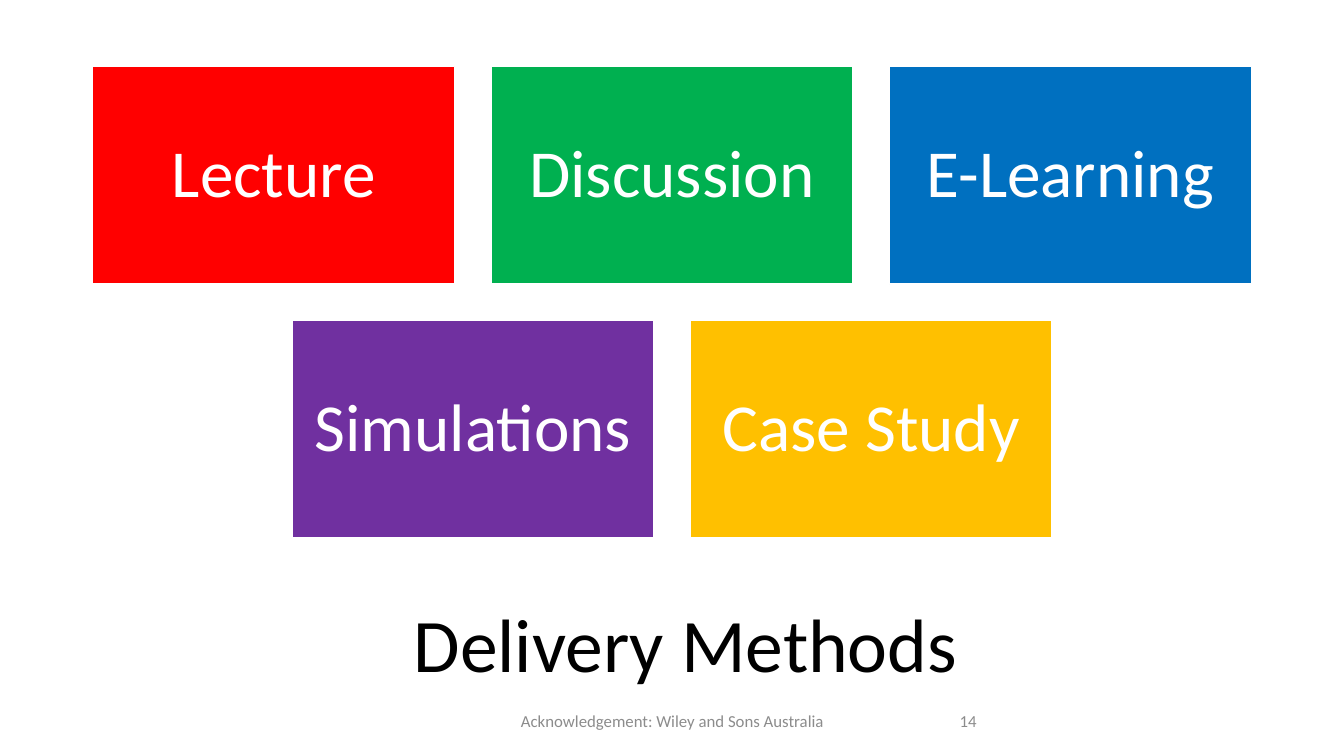
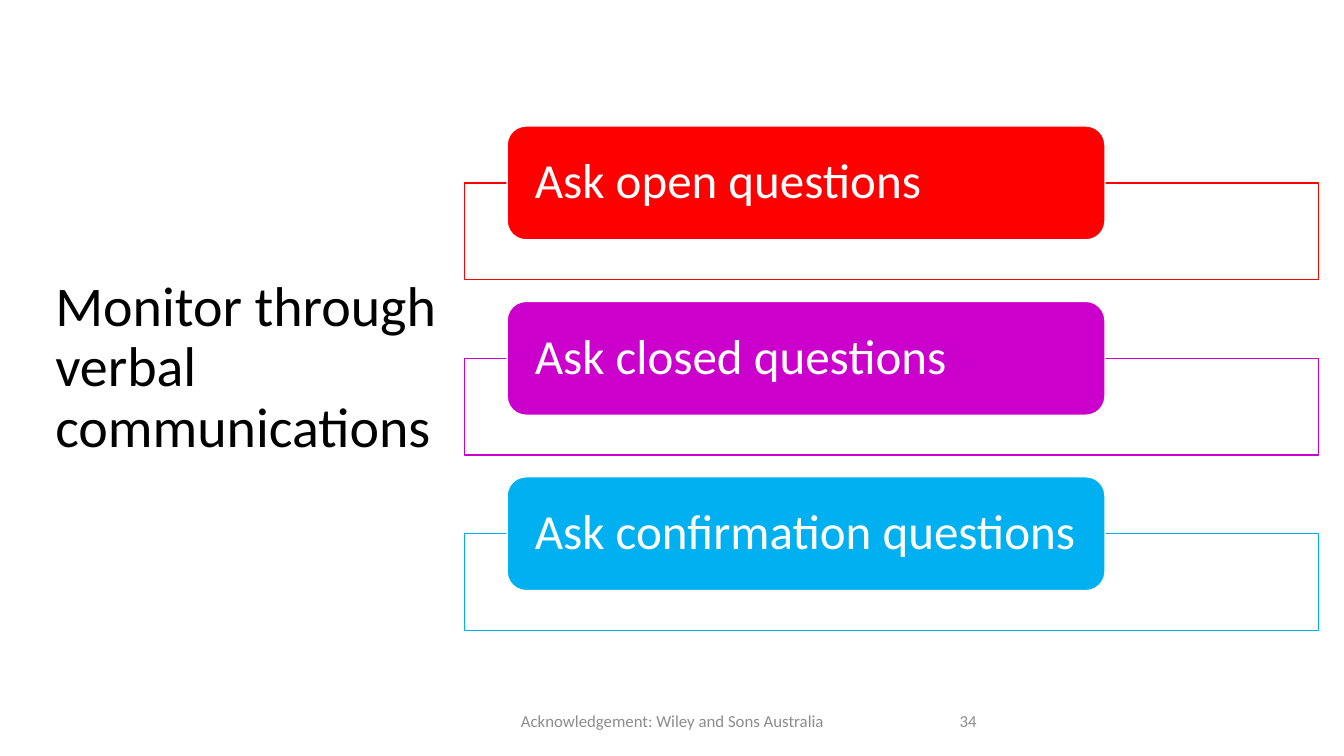
from pptx import Presentation
from pptx.dml.color import RGBColor
from pptx.enum.shapes import MSO_SHAPE
from pptx.enum.text import MSO_ANCHOR, PP_ALIGN
from pptx.util import Inches, Pt

RECT, ROUND = MSO_SHAPE.RECTANGLE, MSO_SHAPE.ROUNDED_RECTANGLE
LEFT, MID = PP_ALIGN.LEFT, PP_ALIGN.CENTER
FONT = "Calibri"
INK = {
    "black": "000000", "white": "FFFFFF", "gray": "8C8C8C",
    "red": "FF0000", "green": "00B050", "blue": "0070C0",
    "violet": "7030A0", "gold": "FFC000", "pink": "CC00CC", "sky": "00B0F0",
}
WIDE, HIGH = 13.33, 7.5

deck = Presentation()
deck.slide_width, deck.slide_height = Inches(WIDE), Inches(HIGH)
blank = deck.slide_layouts[6]


def write(shape, words, size, ink, align=LEFT, space=0.9, pad=0.1):
    """Set one styled paragraph, centred top to bottom."""
    frame = shape.text_frame
    frame.word_wrap = True
    frame.vertical_anchor = MSO_ANCHOR.MIDDLE
    frame.margin_left = Inches(pad)
    para = frame.paragraphs[0]
    para.text = words
    para.alignment, para.line_spacing = align, space
    font = para.runs[0].font
    font.name, font.size = FONT, Pt(size)
    font.color.rgb = RGBColor.from_string(INK[ink])


def block(slide, kind, place, fill, line):
    """Draw a filled shape with a thin outline."""
    shape = slide.shapes.add_shape(kind, *map(Inches, place))
    shape.shadow.inherit = False
    shape.fill.solid()
    shape.fill.fore_color.rgb = RGBColor.from_string(INK[fill])
    shape.line.color.rgb = RGBColor.from_string(INK[line])
    shape.line.width = Pt(1)
    return shape


# Title, footer and number of each slide
pages = [
    ("Delivery Methods", (1.52, 5.89, 10.56, 1.07), 54, MID, "14"),
    ("Monitor through verbal communications", (0.45, 0.61, 4.16, 6.09), 40, LEFT, "34"),
]
slides = []
for title, place, size, align, number in pages:
    slide = deck.slides.add_slide(blank)
    slides.append(slide)
    write(slide.shapes.add_textbox(*map(Inches, place)), title, size, "black", align)
    feet = [("Acknowledgement: Wiley and Sons Australia", 4.42, 4.5, MID),
            (number, 9.42, 3, LEFT)]
    for words, left, width, side in feet:
        box = slide.shapes.add_textbox(
            Inches(left), Inches(6.95), Inches(width), Inches(0.4))
        write(box, words, 12, "gray", side, 1)
methods, monitor = slides

# Tiles: centred rows with equal gaps
rows = [
    [("Lecture", "red"), ("Discussion", "green"), ("E-Learning", "blue")],
    [("Simulations", "violet"), ("Case Study", "gold")],
]
tile_w, tile_h, gap = 3.59, 2.16, 0.36
for r, row in enumerate(rows):
    span = len(row) * (tile_w + gap) - gap
    start = WIDE / 2 - span / 2
    for c, (words, ink) in enumerate(row):
        place = (start + c * (tile_w + gap), 0.66 + r * (tile_h + gap), tile_w, tile_h)
        write(block(methods, RECT, place, ink, "white"), words, 48, "white", MID)

# Questions: a rounded label over each outlined band
asks = [("Ask open questions", "red"), ("Ask closed questions", "pink"),
        ("Ask confirmation questions", "sky")]
label_h, step = 1.13, 1.74
for r, (words, ink) in enumerate(asks):
    top = 1.25 + r * step
    block(monitor, RECT, (4.61, top + label_h / 2, 8.47, 0.96), "white", ink)
    label = block(monitor, ROUND, (5.03, top, 5.93, label_h), ink, "white")
    write(label, words, 35, "white", pad=0.22)

deck.save("out.pptx")
